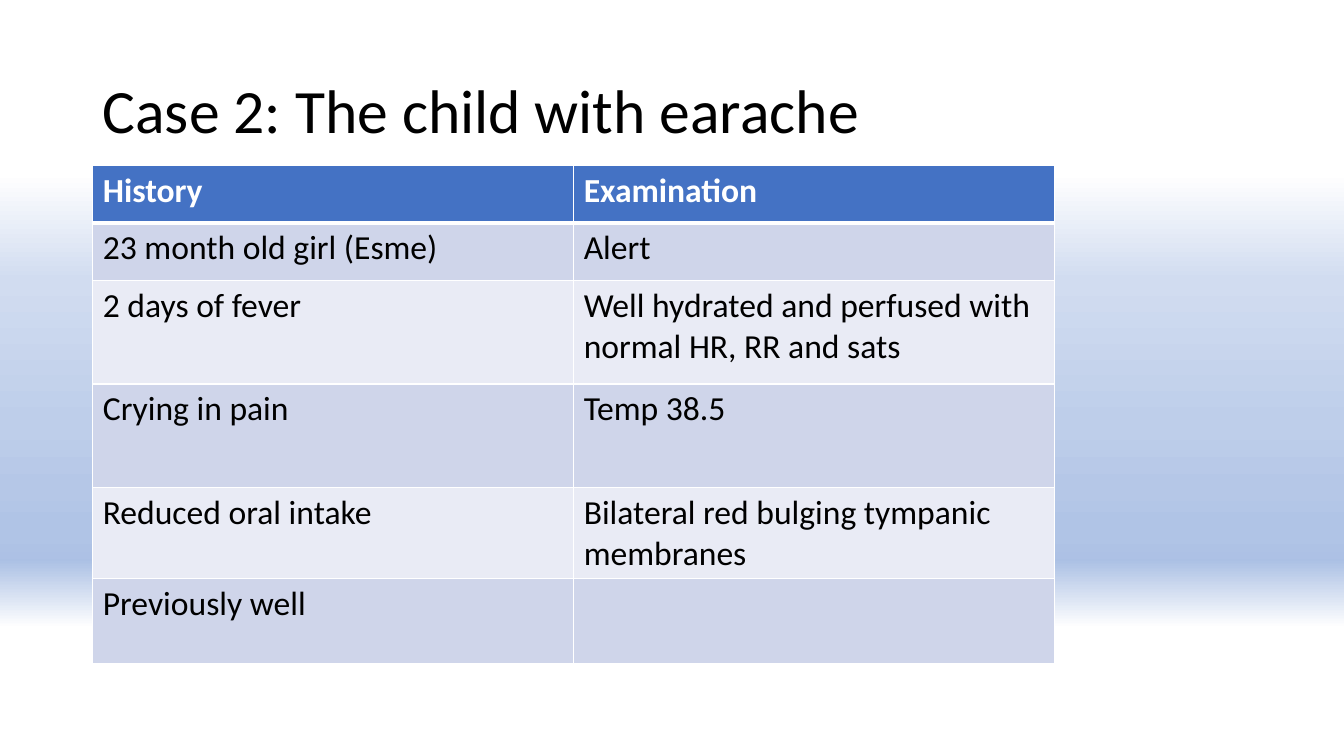
import pptx
import pptx.dml.color
import pptx.enum.text
import pptx.oxml
import pptx.oxml.ns
import pptx.util
from dataclasses import dataclass
from pptx.util import Inches


@dataclass(frozen=True)
class Theme:
    font: str = "Calibri"
    title_size: int = 44
    table_size: int = 24
    ink: str = "000000"
    white: str = "FFFFFF"
    header: str = "4472C4"
    bands: tuple = ("CFD5EA", "E9EBF5")
    backdrop: tuple = (
        (23, "FFFFFF"), (37, "D1DCF0"), (56, "BECEEA"), (65, "B5C7E7"), (69, "B0C4E6"),
        (72, "AEC2E5"), (73, "ADC1E5"), (74, "ABC0E4"), (83, "FFFFFF"))


theme = Theme()
NS = pptx.oxml.ns.nsdecls("a")


def write(frame, text, size, color, bold=False, line_spacing=None):
    paragraph = frame.paragraphs[0]
    paragraph.line_spacing = line_spacing
    run = paragraph.add_run()
    run.text = text
    run.font.name = theme.font
    run.font.size = pptx.util.Pt(size)
    run.font.bold = bold
    run.font.color.rgb = pptx.dml.color.RGBColor.from_string(color)


def set_borders(cell, widths):
    """Draw white cell borders; widths maps the sides L, R, T, B, in that order, to points."""
    properties = cell._tc.get_or_add_tcPr()
    for position, (side, points) in enumerate(widths.items()):
        properties.insert(position, pptx.oxml.parse_xml(
            f'<a:ln{side} {NS} w="{pptx.util.Pt(points)}"><a:solidFill>'
            f'<a:srgbClr val="{theme.white}"/></a:solidFill></a:ln{side}>'))


presentation = pptx.Presentation()
presentation.slide_width = Inches(13.33)
presentation.slide_height = Inches(7.5)
slide = presentation.slides.add_slide(presentation.slide_layouts[6])

# Background: blue band fading to white above and below
backdrop = slide.background.fill
backdrop.gradient()
backdrop.gradient_angle = 270
stops = slide.element.find(".//" + pptx.oxml.ns.qn("a:gsLst"))
for stop in list(stops):
    stops.remove(stop)
for percent, color in theme.backdrop:
    stops.append(pptx.oxml.parse_xml(
        f'<a:gs {NS} pos="{percent * 1000}"><a:srgbClr val="{color}"/></a:gs>'))

# Title
title = slide.shapes.add_textbox(Inches(0.92), Inches(0.4), Inches(9.34), Inches(1.45)).text_frame
title.word_wrap = True
title.vertical_anchor = pptx.enum.text.MSO_ANCHOR.MIDDLE
write(title, "Case 2: The child with earache", theme.title_size, theme.ink, line_spacing=0.9)

# History and examination findings
findings = [
    ("History", "Examination"),
    ("23 month old girl (Esme)", "Alert"),
    ("2 days of fever", "Well hydrated and perfused with normal HR, RR and sats"),
    ("Crying in pain", "Temp 38.5"),
    ("Reduced oral intake", "Bilateral red bulging tympanic membranes"),
    ("Previously well", ""),
]
row_heights = [0.57, 0.57, 1.03, 1.03, 0.84, 0.84]
case_table = slide.shapes.add_table(
    len(findings), 2, Inches(0.92), Inches(1.64), Inches(9.54), Inches(sum(row_heights))).table
for column in case_table.columns:
    column.width = Inches(4.77)

for row, (entries, height) in enumerate(zip(findings, row_heights)):
    case_table.rows[row].height = Inches(height)
    is_header = row == 0
    fill = theme.header if is_header else theme.bands[(row - 1) % 2]
    for column, entry in enumerate(entries):
        cell = case_table.cell(row, column)
        cell.fill.solid()
        cell.fill.fore_color.rgb = pptx.dml.color.RGBColor.from_string(fill)
        set_borders(cell, {"L": 1, "R": 1, "T": 3 if row == 1 else 1, "B": 3 if is_header else 1})
        if entry:
            write(cell.text_frame, entry, theme.table_size,
                  theme.white if is_header else theme.ink, bold=is_header)

presentation.save("out.pptx")
